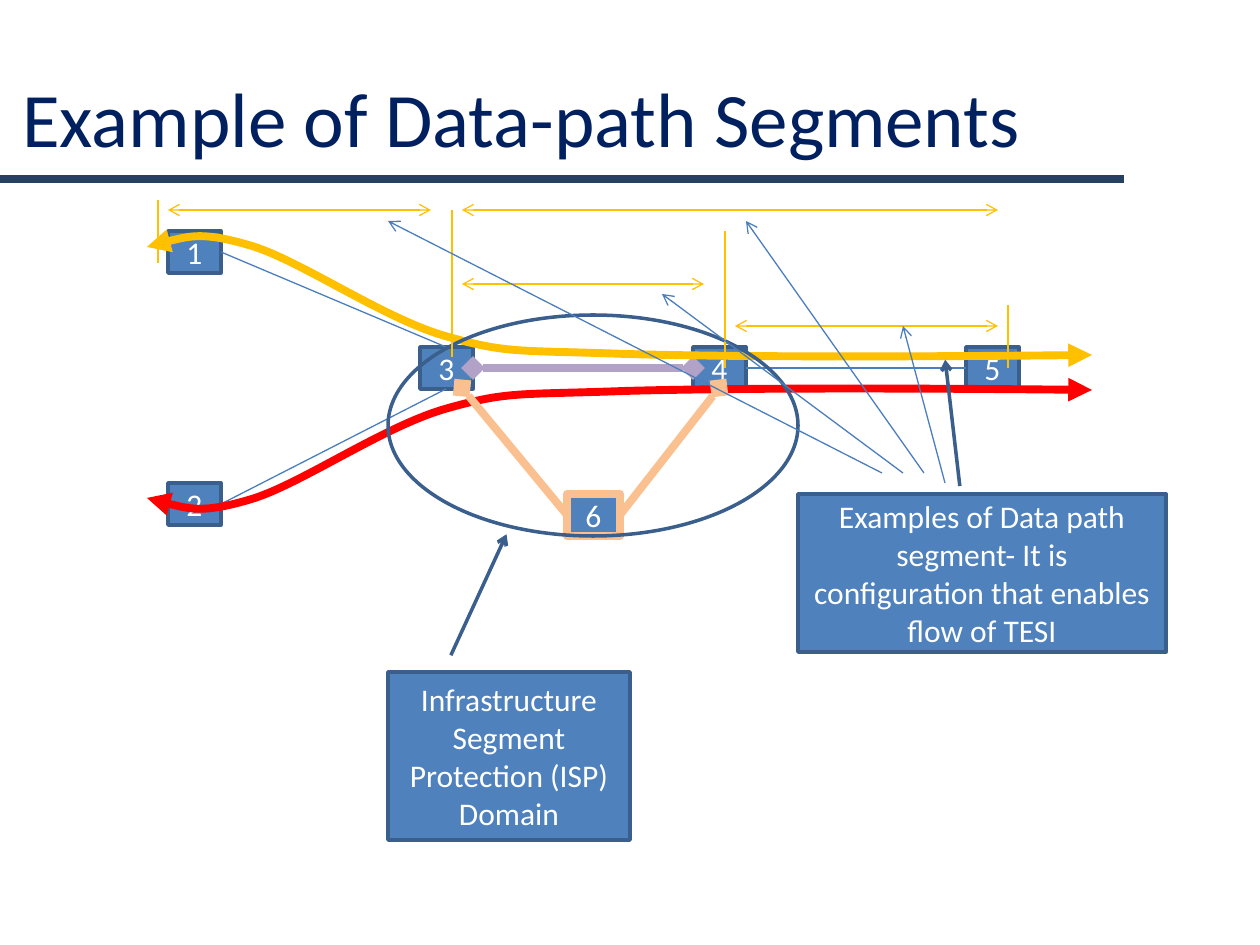
from lxml import etree
from pptx import Presentation
from pptx.dml.color import RGBColor
from pptx.enum.shapes import MSO_CONNECTOR, MSO_SHAPE
from pptx.enum.text import MSO_ANCHOR, PP_ALIGN
from pptx.oxml.ns import qn
from pptx.util import Pt

PX = 914400 / 126  # EMU per pixel
STRAIGHT = MSO_CONNECTOR.STRAIGHT
RECTANGLE = MSO_SHAPE.RECTANGLE
ELLIPSE = MSO_SHAPE.OVAL
CALLOUT = MSO_SHAPE.LINE_CALLOUT_1
MIDDLE = MSO_ANCHOR.MIDDLE
CENTER = PP_ALIGN.CENTER

WHITE = RGBColor(0xFF, 0xFF, 0xFF)
NAVY = RGBColor(0x00, 0x20, 0x60)
RULE_BLUE = RGBColor(0x25, 0x40, 0x61)
FILL_BLUE = RGBColor(0x4F, 0x81, 0xBD)
EDGE_BLUE = RGBColor(0x3A, 0x5F, 0x8C)
LINK_BLUE = RGBColor(0x4B, 0x7E, 0xBC)
YELLOW = RGBColor(0xFF, 0xC0, 0x00)
RED = RGBColor(0xFF, 0x00, 0x00)
LAVENDER = RGBColor(0xB3, 0xA2, 0xC7)
PEACH = RGBColor(0xFA, 0xC0, 0x90)

THIN, EDGE, THICK = 0.75, 2, 4.5
NODE_WIDTH, NODE_HEIGHT = 53, 42

presentation = Presentation()
presentation.slide_width = round(1260 * PX)
presentation.slide_height = round(945 * PX)
slide = presentation.slides.add_slide(presentation.slide_layouts[6])


def add_line(points, color, width=THIN, head=None, tail=None):
    """Draw a straight connector for two points, a Bezier curve for more."""
    if len(points) == 2:
        shape = slide.shapes.add_connector(
            STRAIGHT, *(round(value * PX) for point in points for value in point))
    else:
        builder = slide.shapes.build_freeform(*points[0], scale=PX)
        builder.add_line_segments(points[1:], close=False)
        shape = builder.convert_to_shape()
        shape.fill.background()
        # Each three line segments become one cubic curve
        outline = next(shape.element.iter(qn("a:path")))
        segments = outline.findall(qn("a:lnTo"))
        for start in range(0, len(segments), 3):
            curve = etree.SubElement(outline, qn("a:cubicBezTo"))
            for segment in segments[start:start + 3]:
                curve.append(segment[0])
                outline.remove(segment)
    shape.line.color.rgb = color
    shape.line.width = Pt(width)
    properties = shape.element.spPr
    for tag, end in (("a:headEnd", head), ("a:tailEnd", tail)):
        if end:
            etree.SubElement(properties.find(qn("a:ln")), qn(tag), type=end)
    etree.SubElement(properties, qn("a:effectLst"))


def add_box(kind, frame, text="", edge=EDGE_BLUE, width=EDGE, pointer=None):
    """Draw a bordered shape, filled when it has text, with an optional pointer."""
    shape = slide.shapes.add_shape(kind, *(round(value * PX) for value in frame))
    shape.shadow.inherit = False
    shape.line.color.rgb = edge
    shape.line.width = Pt(width)
    if pointer:
        for index, value in enumerate(pointer):
            shape.adjustments[index] = value
        line = shape.element.spPr.find(qn("a:ln"))
        etree.SubElement(line, qn("a:tailEnd"), type="arrow")
    if not text:
        shape.fill.background()
        return
    shape.fill.solid()
    shape.fill.fore_color.rgb = FILL_BLUE
    shape.text_frame.word_wrap = True
    shape.text_frame.vertical_anchor = MIDDLE
    paragraph = shape.text_frame.paragraphs[0]
    paragraph.text = text
    paragraph.alignment = CENTER
    for name, value in {"name": "Calibri", "size": Pt(18)}.items():
        setattr(paragraph.font, name, value)
    paragraph.font.color.rgb = WHITE


# Title and rule
add_line([(0, 179), (1124, 179)], RULE_BLUE, THICK)
title = slide.shapes.add_textbox(*(round(value * PX) for value in (10, 38, 1134, 158)))
title.text_frame.word_wrap = True
title.text_frame.vertical_anchor = MIDDLE
heading = title.text_frame.paragraphs[0]
heading.text = "Example of Data-path Segments"
for name, value in {"name": "Calibri", "size": Pt(44)}.items():
    setattr(heading.font, name, value)
heading.font.color.rgb = NAVY

# Network nodes
for label, left, top in (("1", 168, 231), ("5", 966, 347), ("4", 693, 347),
                         ("3", 420, 347), ("2", 168, 483)):
    add_box(RECTANGLE, (left, top, NODE_WIDTH, NODE_HEIGHT), label)

# Links between nodes
add_line([(221, 252), (446, 347)], LINK_BLUE)
add_line([(221, 504), (446, 389)], LINK_BLUE)
add_line([(473, 368), (693, 368)], LAVENDER, THICK, "diamond", "diamond")
add_line([(746, 368), (966, 368)], LINK_BLUE)

# Traffic flows: the lower one mirrors the upper one
upper_flow = [(147, 247), (174, 239), (202, 231), (252, 246), (301, 261),
              (383, 318), (445, 336), (508, 354), (517, 350), (625, 354),
              (732, 357), (912, 357), (1092, 355)]
lower_flow = [(x, 745 - y) for x, y in upper_flow]
for flow, color in ((upper_flow, YELLOW), (lower_flow, RED)):
    add_line(flow, color, THICK, "triangle", "triangle")

# Data path callout
add_box(CALLOUT, (798, 494, 368, 158),
        "Examples of Data path segment- It is configuration that enables flow of TESI",
        pointer=(-0.05, 0.44, -0.85, 0.4))

# Protection path through node 6, and its domain
add_box(RECTANGLE, (567, 494, NODE_WIDTH, NODE_HEIGHT), "6", PEACH, THICK)
add_line([(462, 388), (567, 515)], PEACH, THICK, head="diamond")
add_line([(620, 515), (719, 388)], PEACH, THICK, tail="diamond")
add_box(ELLIPSE, (388, 315, 410, 221))
add_box(CALLOUT, (388, 672, 242, 168),
        "Infrastructure Segment Protection (ISP) Domain",
        pointer=(-0.1, 0.26, -0.82, 0.49))

# Segment boundaries
for x, top, bottom in ((158, 200, 263), (452, 210, 357),
                       (725, 231, 368), (1008, 305, 368)):
    add_line([(x, top), (x, bottom)], YELLOW)

# Segment extents
for left, right, y in ((168, 431, 210), (462, 704, 284),
                       (462, 998, 210), (735, 998, 326)):
    add_line([(left, y), (right, y)], YELLOW, THIN, "arrow", "arrow")

# Pointers from the callout to the segments
for start, end in (((945, 483), (903, 326)), ((924, 473), (746, 221)),
                   ((903, 473), (662, 294)), ((882, 473), (388, 221))):
    add_line([start, end], LINK_BLUE, tail="arrow")

presentation.save("out.pptx")
